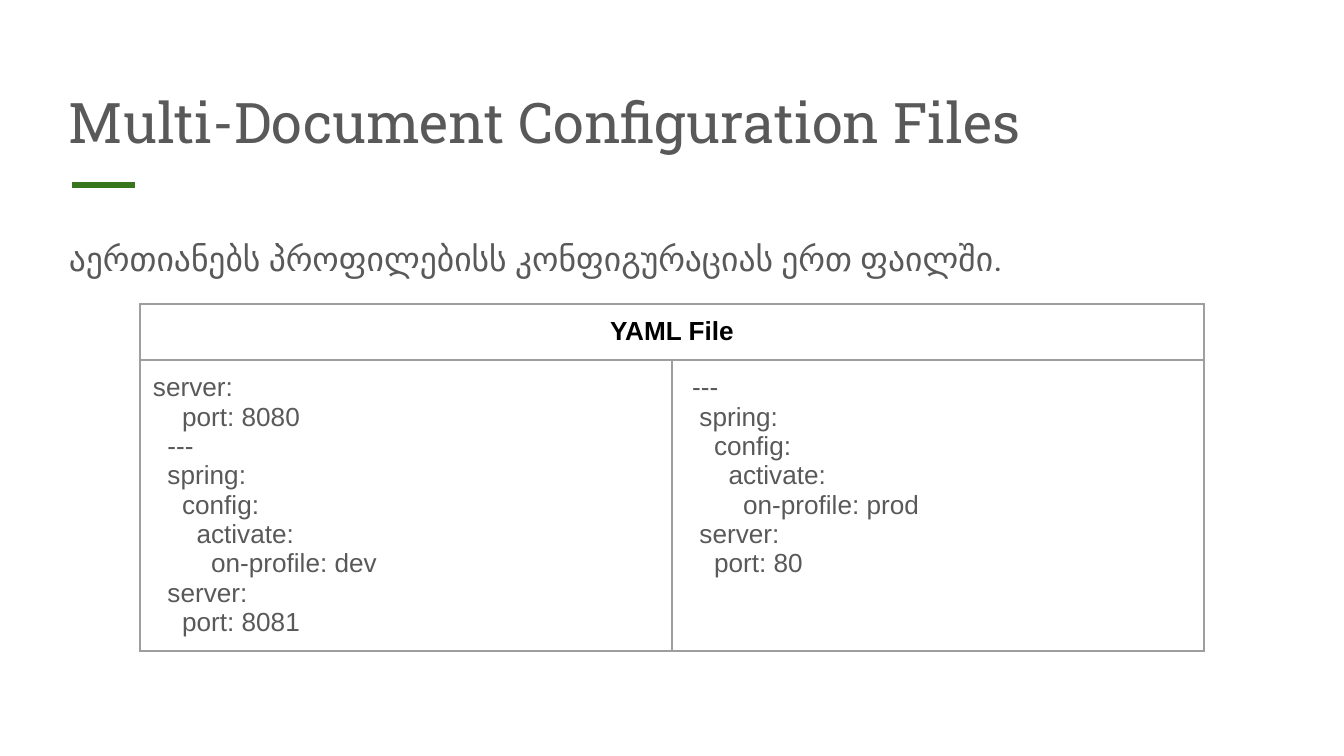
import pptx
import pptx.dml.color
import pptx.enum.shapes
import pptx.enum.text
import pptx.oxml
import pptx.oxml.ns
import pptx.util

RGBColor = pptx.dml.color.RGBColor
Align = pptx.enum.text.PP_ALIGN
Anchor = pptx.enum.text.MSO_ANCHOR

PX = 914400 / 134.4
INSET = 13
SPACE_WIDTH = pptx.util.Pt(3.89)  # one Arial space at 14 pt

GRAY = RGBColor(0x59, 0x59, 0x59)
BLACK = RGBColor(0, 0, 0)
GREEN = RGBColor(0x38, 0x76, 0x1D)
BORDER = RGBColor(0x9E, 0x9E, 0x9E)

# Each YAML line: (indent in spaces, text)
DEFAULT_AND_DEV = [
    (0, "server:"),
    (4, "port: 8080"),
    (2, "---"),
    (2, "spring:"),
    (4, "config:"),
    (6, "activate:"),
    (8, "on-profile: dev"),
    (2, "server:"),
    (4, "port: 8081"),
]
PROD = [
    (1, "---"),
    (2, "spring:"),
    (4, "config:"),
    (6, "activate:"),
    (8, "on-profile: prod"),
    (2, "server:"),
    (4, "port: 80"),
]


def px(length):
    return pptx.util.Emu(round(length * PX))


def set_insets(target):
    target.margin_left = target.margin_right = px(INSET)
    target.margin_top = target.margin_bottom = px(INSET)


def add_run(para, text, font, size, color, bold=False):
    span = para.add_run()
    span.text = text
    span.font.name = font
    span.font.size = pptx.util.Pt(size)
    span.font.color.rgb = color
    span.font.bold = bold


def place(shape, left, top, width, height):
    shape.left, shape.top = px(left), px(top)
    shape.width, shape.height = px(width), px(height)


def format_frame(frame, anchor):
    frame.word_wrap = True
    frame.auto_size = pptx.enum.text.MSO_AUTO_SIZE.NONE
    frame.vertical_anchor = anchor
    set_insets(frame)


def add_title(page, text):
    title = page.shapes.title
    place(title, 56, 67, 1230, 101)
    format_frame(title.text_frame, Anchor.BOTTOM)
    para = title.text_frame.paragraphs[0]
    para.alignment = Align.LEFT
    add_run(para, text, "Roboto Slab", 30, GRAY)


def add_accent_line(page):
    line = page.shapes.add_connector(
        pptx.enum.shapes.MSO_CONNECTOR.STRAIGHT, px(72), px(185), px(135), px(185))
    line.line.color.rgb = GREEN
    line.line.width = pptx.util.Pt(3)
    pptx.oxml.ns.qn("a:effectLst")
    line._element.spPr.append(
        pptx.oxml.parse_xml(f'<a:effectLst {pptx.oxml.ns.nsdecls("a")}/>'))


def add_body(page, text):
    box = page.shapes.add_textbox(px(56), px(219), px(1230), px(453))
    format_frame(box.text_frame, Anchor.TOP)
    para = box.text_frame.paragraphs[0]
    para.line_spacing = 1.15
    para.space_after = pptx.util.Pt(12)
    add_run(para, text, "Roboto", 18, GRAY)


def format_cell(cell):
    """Clear the fill, set the insets and draw a border on all four sides."""
    cell.fill.background()
    set_insets(cell)
    properties = cell._tc.get_or_add_tcPr()
    for order, side in enumerate("LRTB"):
        properties.insert(order, pptx.oxml.parse_xml(
            f'<a:ln{side} {pptx.oxml.ns.nsdecls("a")} w="{pptx.util.Pt(0.75)}">'
            f'<a:solidFill><a:srgbClr val="{BORDER}"/></a:solidFill></a:ln{side}>'))


def fill_yaml_cell(cell, lines):
    frame = cell.text_frame
    for number, (indent, text) in enumerate(lines):
        para = frame.add_paragraph() if number else frame.paragraphs[0]
        properties = para._p.get_or_add_pPr()
        properties.set("marL", str(indent * SPACE_WIDTH))
        properties.set("indent", "0")
        add_run(para, text, "Arial", 14, GRAY)


def add_yaml_table(page):
    heights = (56, 291)
    table = page.shapes.add_table(
        2, 2, px(140), px(304), px(1064), px(sum(heights))).table
    table.first_row = table.horz_banding = False
    for column in table.columns:
        column.width = px(532)
    for row, height in zip(table.rows, heights):
        row.height = px(height)
    for cell in table.iter_cells():
        format_cell(cell)

    header = table.cell(0, 0)
    header.merge(table.cell(0, 1))
    para = header.text_frame.paragraphs[0]
    para.alignment = Align.CENTER
    add_run(para, "YAML File", "Arial", 14, BLACK, bold=True)
    for column, lines in enumerate((DEFAULT_AND_DEV, PROD)):
        fill_yaml_cell(table.cell(1, column), lines)


def main():
    deck = pptx.Presentation()
    deck.slide_width, deck.slide_height = px(1344), px(756)
    page = deck.slides.add_slide(deck.slide_layouts.get_by_name("Title Only"))
    add_accent_line(page)
    add_title(page, "Multi-Document Configuration Files")
    add_body(page, "აერთიანებს პროფილებისს კონფიგურაციას ერთ ფაილში.")
    add_yaml_table(page)
    deck.save("out.pptx")


if __name__ == "__main__":
    main()
